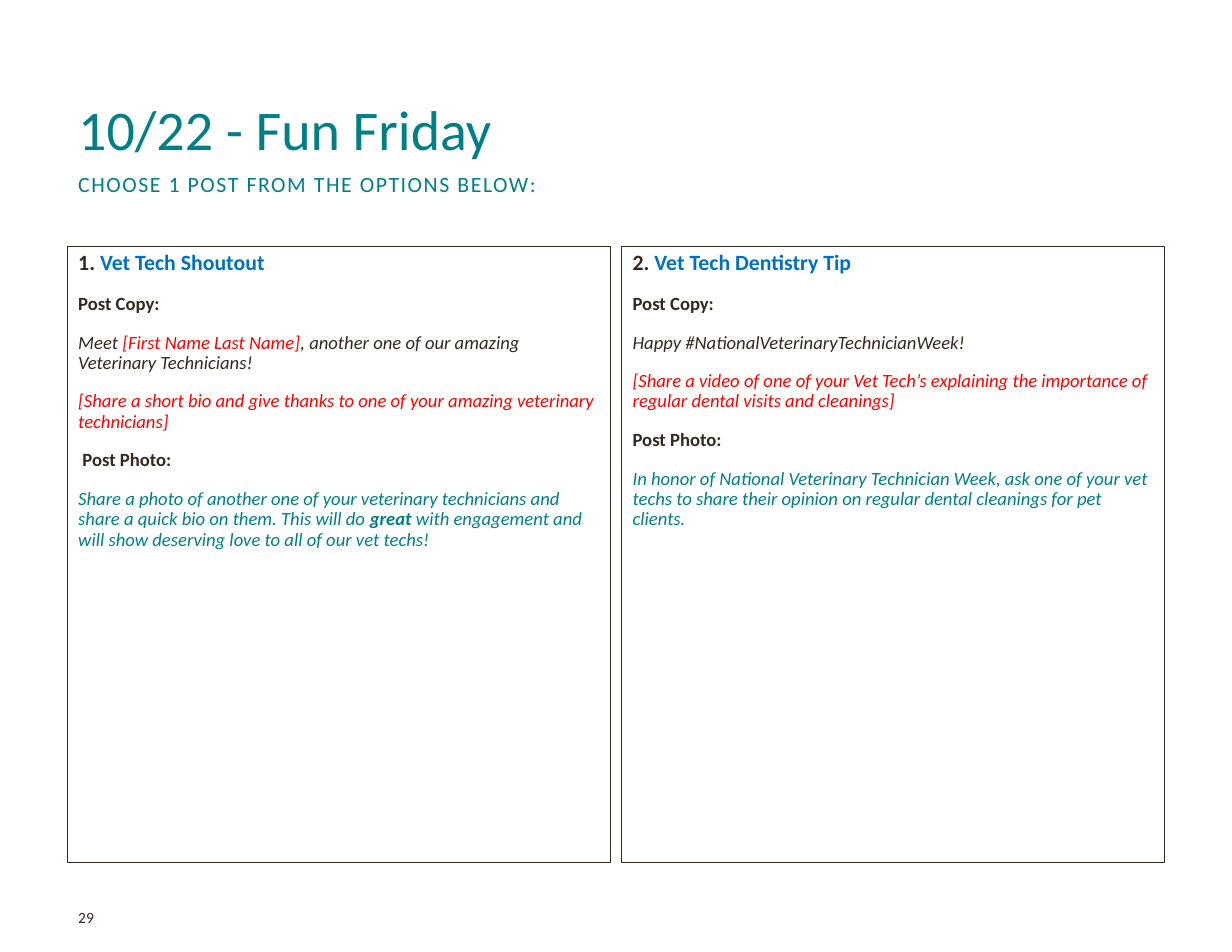
from dataclasses import dataclass
from typing import NamedTuple

from pptx import Presentation
from pptx.dml.color import RGBColor
from pptx.enum.shapes import MSO_SHAPE
from pptx.enum.text import MSO_ANCHOR, PP_ALIGN
from pptx.util import Pt


@dataclass(frozen=True)
class Theme:
    font: str = "Calibri"
    ink: str = "35281F"
    teal: str = "007F85"
    blue: str = "0070C0"
    red: str = "FF0000"
    title: float = 36
    head: float = 14
    body: float = 12
    small: float = 10
    edge: float = 0.75
    lead: float = 0.9
    gap: float = 12


THEME = Theme()


class Span(NamedTuple):
    text: str
    color: str = THEME.ink
    size: float = THEME.body
    bold: bool = False
    slant: bool = False


class Box(NamedTuple):
    left: float
    top: float
    width: float
    height: float


@dataclass(frozen=True)
class Card:
    label: str
    name: str
    copy: list[list[Span]]
    photo: list[Span]
    mark: str = "Post Photo:"

    def lines(self) -> list[list[Span]]:
        return [
            [Span(self.label, size=THEME.head, bold=True),
             Span(self.name, THEME.blue, THEME.head, bold=True)],
            [Span("Post Copy:", bold=True)],
            *self.copy,
            [Span(self.mark, bold=True)],
            self.photo,
        ]


def note(text: str, color: str = THEME.ink, bold: bool = False) -> Span:
    return Span(text, color, bold=bold, slant=True)


LEFT, WIDTH = 43.2, 705.6
TOP, HEIGHT, GUTTER = 158.4, 396, 7.2

CARDS = [
    Card(
        "1. ", "Vet Tech Shoutout",
        [
            [note("Meet "), note("[First Name Last Name]", THEME.red),
             note(", another one of our amazing Veterinary Technicians!")],
            [note("[Share a short bio and give thanks to one of your amazing "
                  "veterinary technicians]", THEME.red)],
        ],
        [
            note("Share a photo of another one of your veterinary technicians "
                 "and share a quick bio on them. This will do ", THEME.teal),
            note("great", THEME.teal, bold=True),
            note(" with engagement and will show deserving love to all of "
                 "our vet techs!", THEME.teal),
        ],
        mark=" Post Photo:",
    ),
    Card(
        "2. ", "Vet Tech Dentistry Tip",
        [
            [note("Happy #NationalVeterinaryTechnicianWeek!")],
            [note("[Share a video of one of your Vet Tech’s explaining the "
                  "importance of regular dental visits and cleanings]", THEME.red)],
        ],
        [note("In honor of National Veterinary Technician Week, ask one of your "
              "vet techs to share their opinion on regular dental cleanings for "
              "pet clients.", THEME.teal)],
    ),
]


def write(frame, lines: list[list[Span]], anchor=MSO_ANCHOR.TOP,
          lead: float = THEME.lead, track: float = 0) -> None:
    frame.word_wrap = True
    frame.vertical_anchor = anchor
    for index, spans in enumerate(lines):
        para = frame.add_paragraph() if index else frame.paragraphs[0]
        para.alignment = PP_ALIGN.LEFT
        para.line_spacing = lead
        if index:
            para.space_before = Pt(THEME.gap)
        para.text = spans[0].text
        for span in spans[1:]:
            para.add_run().text = span.text
        for run, span in zip(para.runs, spans):
            font = run.font
            font.name = THEME.font
            font.size = Pt(span.size)
            font.bold = span.bold
            font.italic = span.slant
            font.color.rgb = RGBColor.from_string(span.color)
            if track:
                run._r.get_or_add_rPr().set("spc", str(int(track * 100)))


def place(box: Box) -> list[Pt]:
    return [Pt(side) for side in box]


def label(slide, box: Box, span: Span, **style) -> None:
    shape = slide.shapes.add_textbox(*place(box))
    write(shape.text_frame, [[span]], **style)


def panel(slide, box: Box, card: Card) -> None:
    shape = slide.shapes.add_shape(MSO_SHAPE.RECTANGLE, *place(box))
    shape.shadow.inherit = False
    shape.fill.background()
    shape.line.color.rgb = RGBColor.from_string(THEME.ink)
    shape.line.width = Pt(THEME.edge)
    write(shape.text_frame, card.lines())


def main() -> None:
    deck = Presentation()
    deck.slide_width, deck.slide_height = Pt(792), Pt(612)
    slide = deck.slides.add_slide(deck.slide_layouts[6])
    label(slide, Box(LEFT, 36, WIDTH, 72),
          Span("10/22 - Fun Friday", THEME.teal, THEME.title),
          anchor=MSO_ANCHOR.BOTTOM)
    label(slide, Box(LEFT, 108, WIDTH, 30.24),
          Span("CHOOSE 1 POST FROM THE OPTIONS BELOW:", THEME.teal, THEME.head),
          track=1)
    width = (WIDTH - GUTTER) / len(CARDS)
    for index, card in enumerate(CARDS):
        left = LEFT + index * (width + GUTTER)
        panel(slide, Box(left, TOP, width, HEIGHT), card)
    label(slide, Box(LEFT, 584.64, 178.56, 14.4), Span("29", size=THEME.small),
          anchor=MSO_ANCHOR.BOTTOM, lead=1.0)
    deck.save("out.pptx")


if __name__ == "__main__":
    main()
